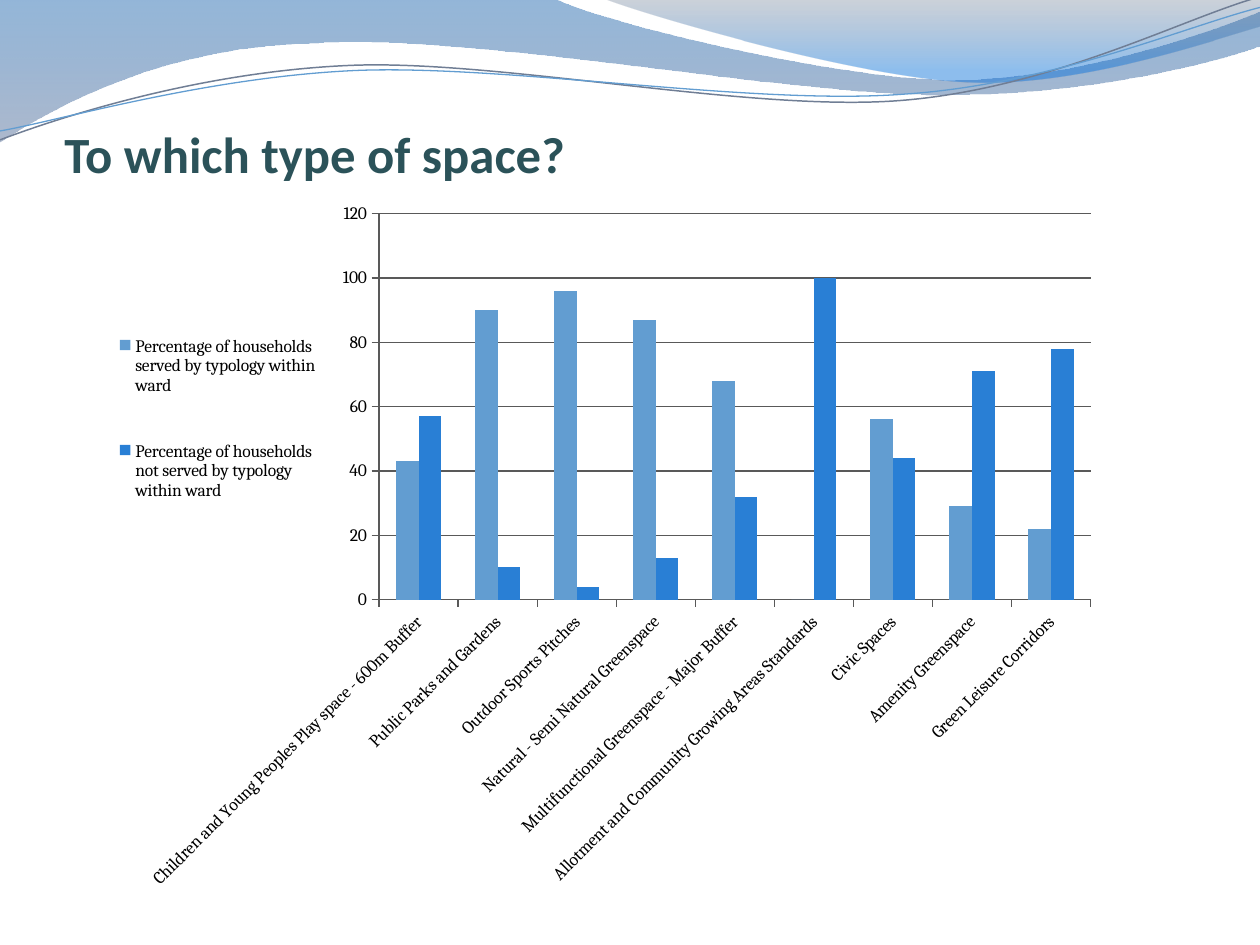
"""Build a slide with a wavy header, a title and a column chart of households by type of space."""
from math import cos, radians, sin

from lxml.etree import SubElement
from pptx import Presentation
from pptx.chart.data import CategoryChartData
from pptx.dml.color import RGBColor
from pptx.enum.chart import XL_CHART_TYPE, XL_LEGEND_POSITION, XL_TICK_MARK
from pptx.enum.text import MSO_ANCHOR
from pptx.oxml import parse_xml
from pptx.oxml.ns import nsdecls, qn
from pptx.util import Cm, Pt

BAND = [(0, 0), (11.18, -0.03), (12.09, 0.43, 16.87, 1.6, 19.25, 1.6),
        (21.67, 1.6, 24.33, 0.66, 25.4, 0.23), (25.43, 0.91),
        (24.97, 1.12, 22.1, 1.93, 18.95, 1.91),
        (15.8, 1.91, 9.7, 0.71, 6.53, 0.86),
        (3.28, 0.91, 1.17, 2.11, -0.03, 2.87)]
CREST = [(12.17, -0.03), (12.93, 0.28, 17.32, 1.57, 19.53, 1.65),
         (21.74, 1.75, 24.41, 0.81, 25.4, 0.53), (25.4, 0)]
GREY_WAVE = [(0, 2.82), (1.22, 2.36, 4.01, 1.45, 7.04, 1.32),
             (10.03, 1.19, 15.06, 2.26, 18.11, 2.03),
             (21.16, 1.8, 23.83, 0.38, 25.35, -0.05)]
BLUE_WAVE = [(0, 2.64), (1.17, 2.44, 4.17, 1.55, 7.19, 1.42),
             (10.24, 1.3, 15.16, 2.13, 18.21, 1.9),
             (21.23, 1.7, 23.9, 0.53, 25.4, 0.15)]

SPACES = [
    ("Children and Young Peoples Play space - 600m Buffer", 43, 57),
    ("Public Parks and Gardens", 90, 10),
    ("Outdoor Sports Pitches", 96, 4),
    ("Natural - Semi Natural Greenspace", 87, 13),
    ("Multifunctional Greenspace - Major Buffer", 68, 32),
    ("Allotment and Community Growing Areas Standards", 0, 100),
    ("Civic Spaces", 56, 44),
    ("Amenity Greenspace", 29, 71),
    ("Green Leisure Corridors", 22, 78),
]
SERIES = [("Percentage of households served by typology within ward", "629DD1"),
          ("Percentage of households not served by typology within ward", "297FD5")]


def hue(code):
    return RGBColor.from_string(code)


def style(font, size, face, color, bold=False):
    font.size, font.name, font.bold = Pt(size), face, bold
    font.color.rgb = hue(color)


def write(frame, text, **form):
    run = frame.paragraphs[0].add_run()
    run.text = text
    style(run.font, **form)


def turn(dot, angle, mid=(12.68, 1.48)):
    x, y = dot[0] - mid[0], dot[1] - mid[1]
    c, s = cos(radians(angle)), sin(radians(angle))
    return mid[0] + x * c - y * s, mid[1] + x * s + y * c


def place(node, index, x, y, w, h, inner=False):
    for old in node.findall(qn("c:layout")):
        node.remove(old)
    target = '<c:layoutTarget val="inner"/>' if inner else ""
    node.insert(index, parse_xml(
        f'<c:layout {nsdecls("c")}><c:manualLayout>{target}'
        '<c:xMode val="edge"/><c:yMode val="edge"/>'
        f'<c:x val="{x}"/><c:y val="{y}"/><c:w val="{w}"/><c:h val="{h}"/>'
        '</c:manualLayout></c:layout>'))


class Page:
    def __init__(self, slide):
        self.slide = slide
        self.head = dict(size=29, face="Calibri", color="2B5259", bold=True)
        self.body = dict(size=10, face="Cambria", color="000000")
        self.rule = "595959"

    def shape(self, steps, close, tilt=0):
        dots = [turn(step[i:i + 2], -tilt) for step in steps for i in range(0, len(step), 2)]
        dots = [(Cm(x), Cm(y)) for x, y in dots]
        pen = self.slide.shapes.build_freeform(*dots[0])
        pen.add_line_segments(dots[1:], close=close)
        form = pen.convert_to_shape()
        form.shadow.inherit = False
        form.rotation = tilt
        lines = iter(list(form.element.iter(qn("a:lnTo"))))
        for step in steps[1:]:
            first = next(lines)
            if len(step) == 6:
                curve = first.makeelement(qn("a:cubicBezTo"))
                first.addprevious(curve)
                for line in (first, next(lines), next(lines)):
                    curve.append(line[0])
                    line.getparent().remove(line)
        return form

    def fade(self, steps, stops):
        form = self.shape(steps, True)
        form.line.fill.background()
        form.fill.gradient()
        form.fill.gradient_angle = 270
        for stop, (spot, color, _) in zip(form.fill.gradient_stops, stops):
            stop.position = spot
            stop.color.rgb = hue(color)
        for node, (_, _, alpha) in zip(form.element.iter(qn("a:srgbClr")), stops):
            SubElement(node, qn("a:alpha")).set("val", str(alpha * 1000))

    def wave(self, steps, color, width):
        form = self.shape(steps, False, tilt=-2.7)
        form.fill.background()
        form.line.color.rgb = hue(color)
        form.line.width = Pt(width)

    def title(self, text, x, y, w, h):
        frame = self.slide.shapes.add_textbox(Cm(x), Cm(y), Cm(w), Cm(h)).text_frame
        frame.word_wrap = True
        frame.vertical_anchor = MSO_ANCHOR.BOTTOM
        frame.margin_left = frame.margin_right = frame.margin_bottom = 0
        write(frame, text, **self.head)

    def stroke(self, line):
        line.color.rgb = hue(self.rule)
        line.width = Pt(0.75)

    def chart(self, rows, series, x, y, w, h):
        data = CategoryChartData(number_format="0")
        names, *columns = zip(*rows)
        data.categories = names
        for (name, _), values in zip(series, columns):
            data.add_series(name, values)
        chart = self.slide.shapes.add_chart(
            XL_CHART_TYPE.COLUMN_CLUSTERED, Cm(x), Cm(y), Cm(w), Cm(h), data).chart
        chart.has_title = False
        style(chart.font, **self.body)
        plot = chart.plots[0]
        plot.gap_width, plot.overlap = 150, 0
        plot.vary_by_categories = False
        for bars, (_, color) in zip(plot.series, series):
            bars.format.fill.solid()
            bars.format.fill.fore_color.rgb = hue(color)
        for axis in (chart.category_axis, chart.value_axis):
            axis.major_tick_mark = XL_TICK_MARK.OUTSIDE
            axis.minor_tick_mark = XL_TICK_MARK.NONE
            self.stroke(axis.format.line)
            style(axis.tick_labels.font, **self.body)
        scale = chart.value_axis
        scale.minimum_scale, scale.maximum_scale, scale.major_unit = 0, 120, 20
        self.stroke(scale.major_gridlines.format.line)
        chart.has_legend = True
        chart.legend.position = XL_LEGEND_POSITION.RIGHT
        chart.legend.include_in_layout = False
        style(chart.legend.font, **self.body)
        root = chart.element
        root.xpath(".//c:catAx/c:txPr/a:bodyPr")[0].set("rot", "-2700000")
        place(root.xpath(".//c:plotArea")[0], 0, 0.275, 0.027, 0.687, 0.543, inner=True)
        place(root.xpath(".//c:legend")[0], 1, 0.014, 0.135, 0.21, 0.36)


def main():
    deck = Presentation()
    deck.slide_width, deck.slide_height = Cm(25.4), Cm(19.05)
    page = Page(deck.slides.add_slide(deck.slide_layouts[6]))
    page.fade(BAND, [(0, "125EAA", 45), (1, "697FA4", 55)])
    page.fade(CREST, [(0, "596982", 30), (0.8, "0670DA", 45)])
    page.wave(GREY_WAVE, "707E95", 0.85)
    page.wave(BLUE_WAVE, "629DD1", 0.75)
    page.chart(SPACES, SERIES, 1.9, 3.92, 20.88, 14.33)
    page.title("To which type of space?", 1.3, 0.53, 23.06, 3.18)
    deck.save("out.pptx")


if __name__ == "__main__":
    main()
